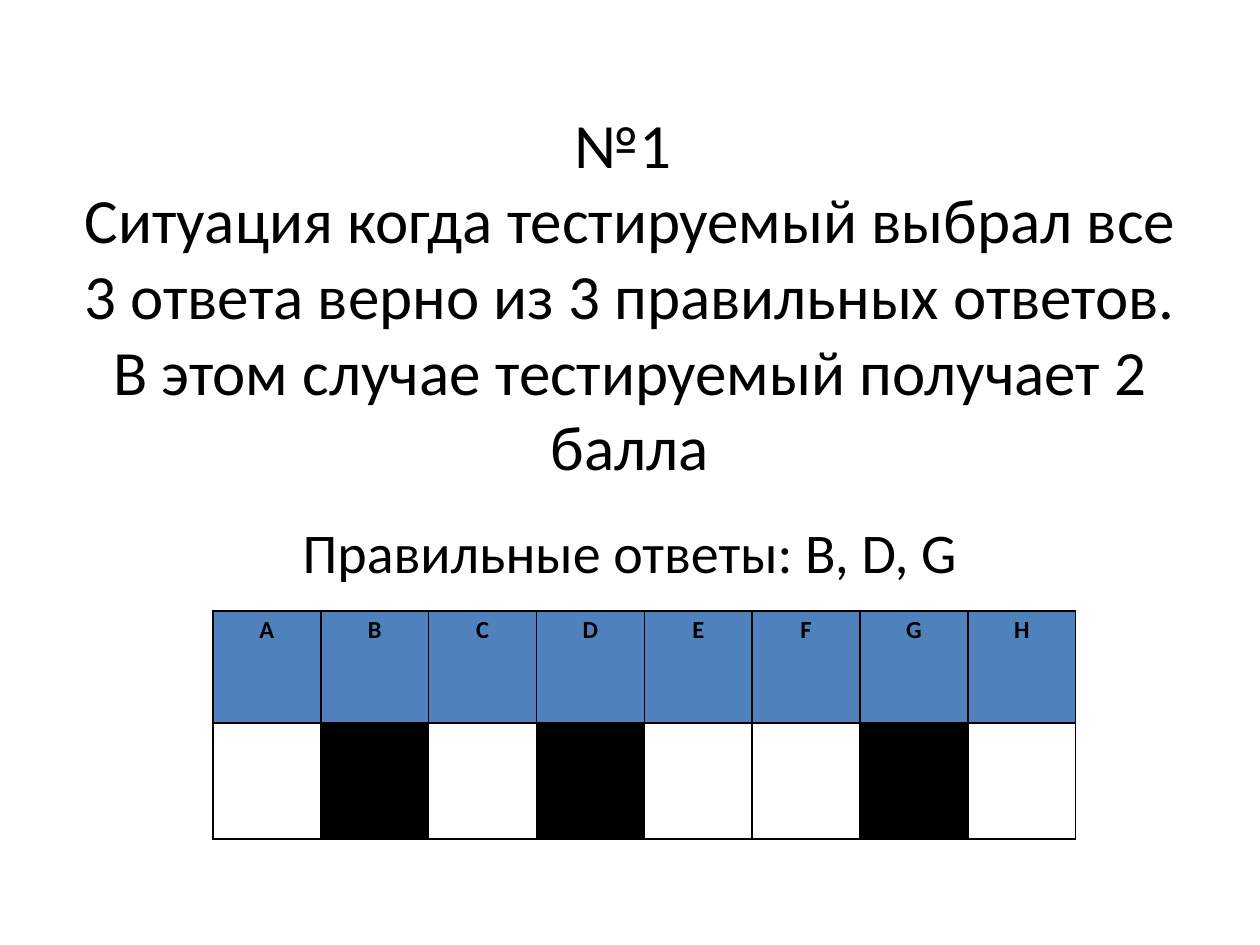
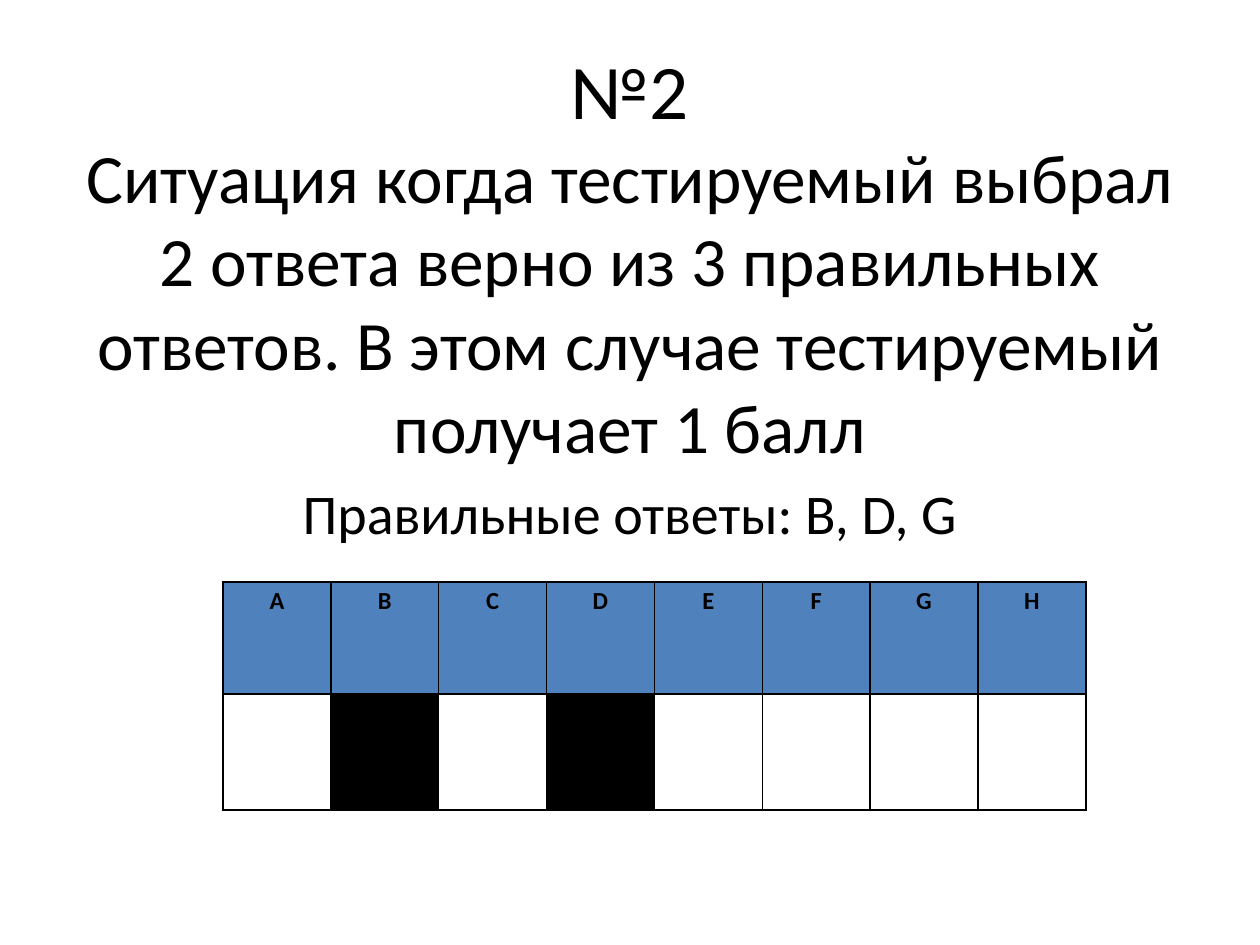
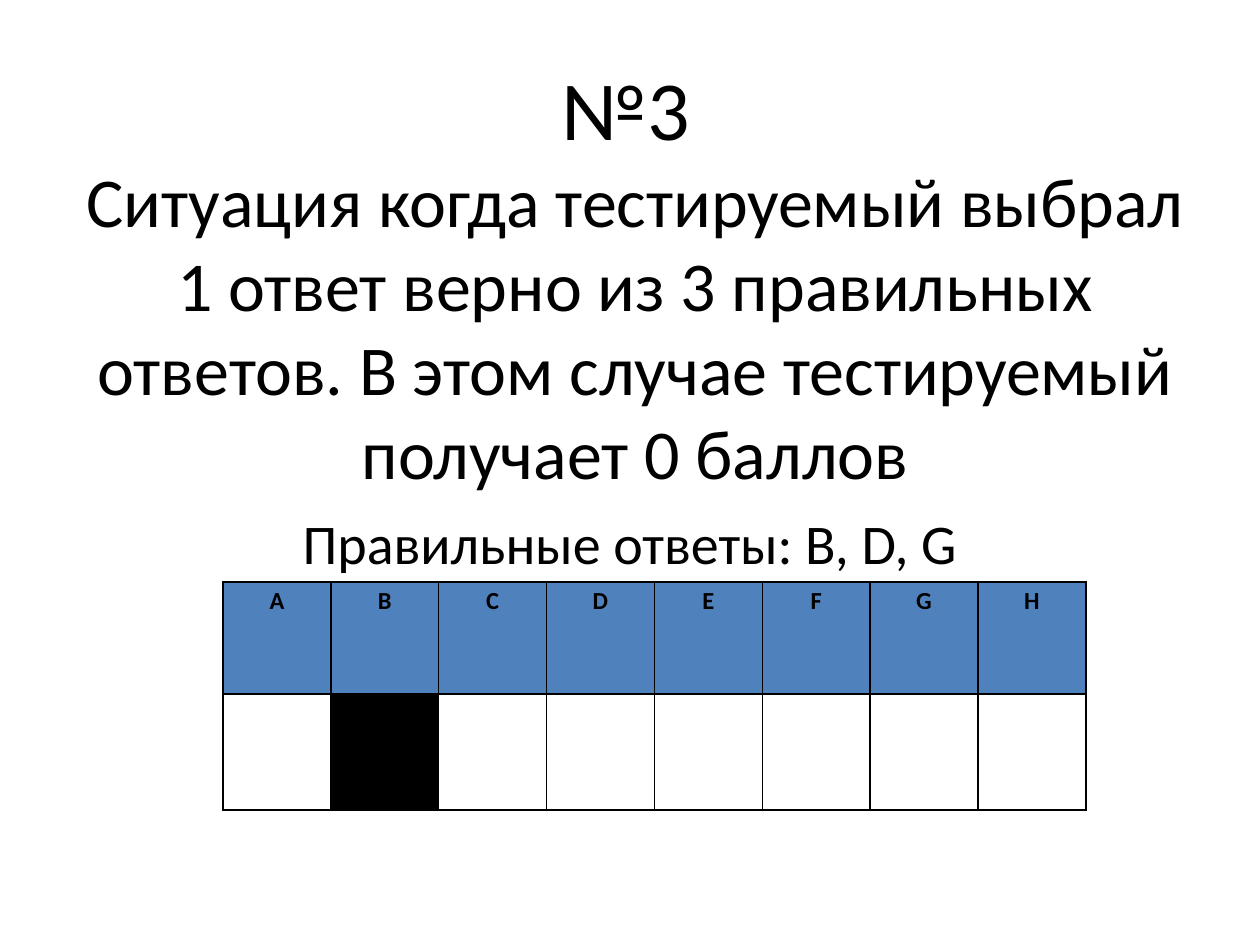
from copy import deepcopy

from lxml import etree
from pptx import Presentation
from pptx.dml.color import RGBColor
from pptx.enum.text import MSO_ANCHOR, MSO_AUTO_SIZE, PP_ALIGN
from pptx.oxml.ns import qn
from pptx.util import Inches, Pt

CENTER = PP_ALIGN.CENTER
MIDDLE, TOP = MSO_ANCHOR.MIDDLE, MSO_ANCHOR.TOP
NO_AUTOFIT = MSO_AUTO_SIZE.NONE

BLACK = RGBColor(0x00, 0x00, 0x00)
HEADER_BLUE = RGBColor(0x4F, 0x81, 0xBD)
FONT = "Calibri"
TITLE_ONLY = 5

# Shared content and answer grid measures
OPTIONS = "ABCDEFGH"
CORRECT = "Правильные ответы: B, D, G"
SITUATION = ("Ситуация когда тестируемый выбрал {} верно из 3 правильных "
             "ответов. В этом случае тестируемый получает {}")
GRID_WIDTH = 6.85
ROW_HEIGHTS = (0.89, 0.92)
BORDER_WIDTH = Pt(1)

# Boxes are left, top, width, height in inches
SLIDES = [
    {"number": "№1 ", "chosen": "все 3 ответа", "score": "2 балла",
     "marked": "BDG", "sizes": (36, 36),
     "title_box": (0.5, 0.37, 9, 3.93), "answer_box": (0.95, 4.06, 8.1, 2.52),
     "grid_at": (1.69, 4.85)},
    {"number": "№2", "chosen": "2 ответа", "score": "1 балл",
     "marked": "BD", "sizes": (44.1, 39.6),
     "title_box": (0.5, 0.37, 9, 3.3), "answer_box": (0.95, 3.75, 8.1, 2.95),
     "grid_at": (1.77, 4.62)},
    {"number": "№3 ", "chosen": "1 ответ", "score": "0 баллов",
     "marked": "B", "sizes": (48, 40),
     "title_box": (0.54, 0.37, 9, 3.62), "answer_box": (0.95, 3.99, 8.1, 2.71),
     "grid_at": (1.77, 4.62)},
]


def set_all(target, values):
    for name, value in values.items():
        setattr(target, name, value)


def add_span(para, text, size, bold=False):
    span = para.add_run()
    span.text = text
    set_all(span.font, {"name": FONT, "size": Pt(size), "bold": bold})
    span.font.color.rgb = BLACK
    return span


def prepare_frame(frame, anchor):
    """Format a text frame and return its centred first paragraph."""
    set_all(frame, {"word_wrap": True, "auto_size": NO_AUTOFIT,
                    "vertical_anchor": anchor})
    para = frame.paragraphs[0]
    para.alignment = CENTER
    return para


def place_title(page, box, number, situation, sizes):
    title = page.shapes.title
    names = ("left", "top", "width", "height")
    set_all(title, dict(zip(names, map(Inches, box))))
    para = prepare_frame(title.text_frame, MIDDLE)
    span = add_span(para, number, sizes[0])
    # The line break keeps the size of the number before it
    para.add_line_break()
    para._p[-1].append(deepcopy(span._r.rPr))
    add_span(para, situation, sizes[1])


def place_answers(page, box):
    shape = page.shapes.add_textbox(*map(Inches, box))
    add_span(prepare_frame(shape.text_frame, TOP), CORRECT, 32)


def add_borders(cell):
    properties = cell._tc.get_or_add_tcPr()
    for side in ("a:lnL", "a:lnR", "a:lnT", "a:lnB"):
        line = etree.SubElement(properties, qn(side), w=str(BORDER_WIDTH))
        fill = etree.SubElement(line, qn("a:solidFill"))
        etree.SubElement(fill, qn("a:srgbClr"), val=str(BLACK))


def fill_cell(cell, color):
    add_borders(cell)
    if color is None:
        cell.fill.background()
    else:
        cell.fill.solid()
        cell.fill.fore_color.rgb = color


def place_grid(page, left, top, marked):
    """Draw option letters above a row where chosen options are black."""
    table = page.shapes.add_table(
        2, len(OPTIONS), Inches(left), Inches(top),
        Inches(GRID_WIDTH), Inches(sum(ROW_HEIGHTS))).table
    set_all(table, {"first_row": False, "horz_banding": False})
    for row, height in zip(table.rows, ROW_HEIGHTS):
        row.height = Inches(height)
    for index, letter in enumerate(OPTIONS):
        table.columns[index].width = Inches(GRID_WIDTH / len(OPTIONS))
        header, answer = table.cell(0, index), table.cell(1, index)
        fill_cell(header, HEADER_BLUE)
        fill_cell(answer, BLACK if letter in marked else None)
        set_all(header, {"margin_left": Inches(0.07), "margin_right": Inches(0.07),
                         "margin_top": 0, "margin_bottom": 0})
        para = header.text_frame.paragraphs[0]
        set_all(para, {"alignment": CENTER, "line_spacing": 1.15})
        add_span(para, letter, 14, bold=True)


def build_situation(deck, data):
    page = deck.slides.add_slide(deck.slide_layouts[TITLE_ONLY])
    situation = SITUATION.format(data["chosen"], data["score"])
    place_title(page, data["title_box"], data["number"], situation, data["sizes"])
    place_answers(page, data["answer_box"])
    place_grid(page, *data["grid_at"], data["marked"])


def main():
    deck = Presentation()
    set_all(deck, {"slide_width": Inches(10), "slide_height": Inches(7.5)})
    for data in SLIDES:
        build_situation(deck, data)
    deck.save("out.pptx")


if __name__ == "__main__":
    main()
